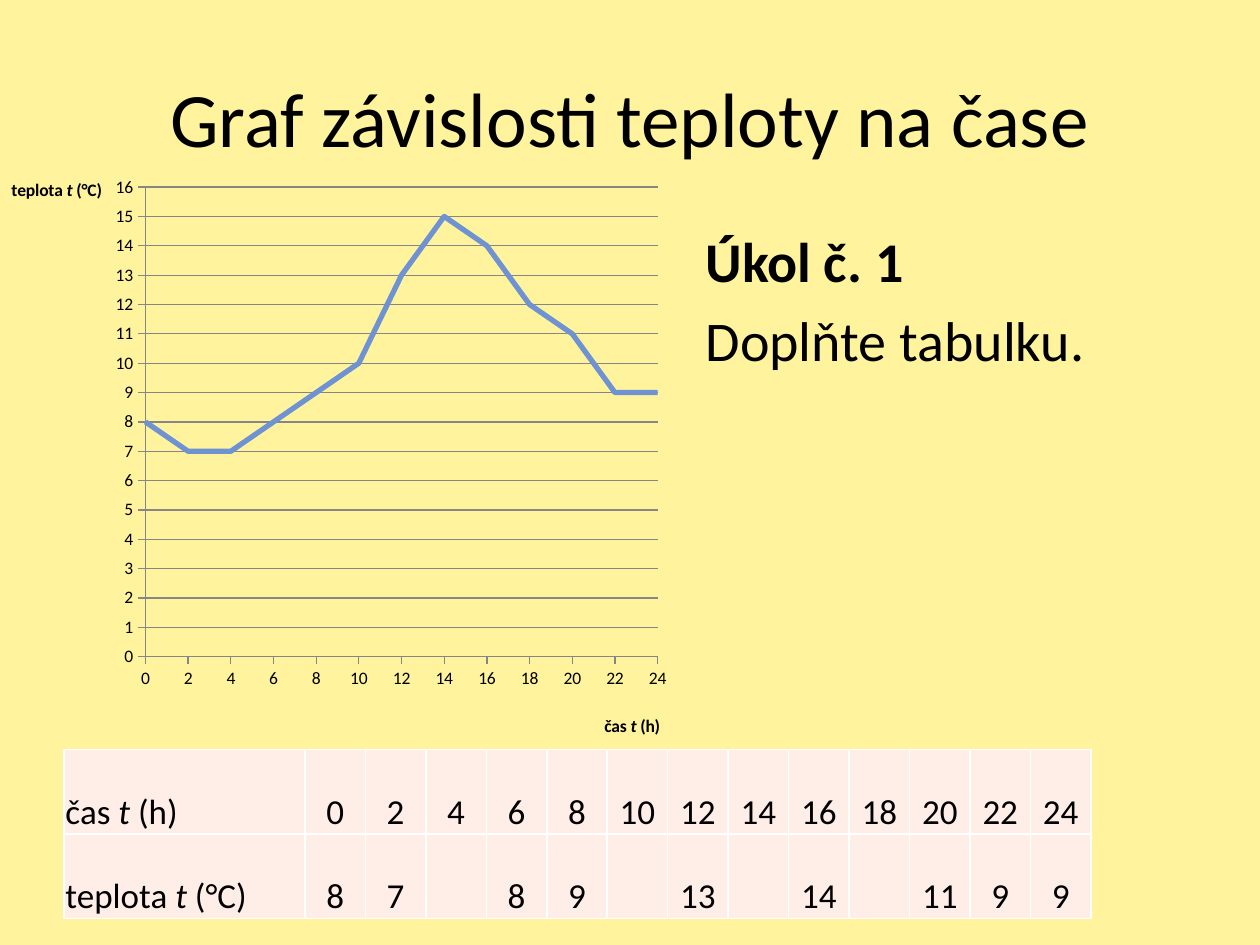
from lxml.etree import SubElement
from pptx import Presentation
from pptx.chart.data import XyChartData
from pptx.dml.color import RGBColor
from pptx.enum.chart import XL_CHART_TYPE, XL_TICK_MARK
from pptx.enum.text import MSO_ANCHOR, PP_ALIGN
from pptx.oxml import parse_xml
from pptx.oxml.ns import nsdecls, qn
from pptx.util import Inches, Pt

FONT = "Calibri"
BLACK, GRID, CURVE = "000000", "868686", "6E92D2"
BACKGROUND, CELL, BORDER = "FFF39D", "FFEDE8", "FFFFFF"

TITLE = "Graf závislosti teploty na čase"
TASK = [("Úkol č. 1", True), ("Doplňte tabulku.", False)]
# Quantity, symbol (italic), unit
TIME = ("čas ", "t", " (h)")
TEMPERATURE = ("teplota ", "t", " (°C)")
HOURS = list(range(0, 25, 2))
DEGREES = [8, 7, 7, 8, 9, 10, 13, 15, 14, 12, 11, 9, 9]
TO_FILL_IN = {4, 10, 14, 18}

PLOT_AREA = (0.253, 0.051, 0.717, 0.744)
LABEL_WIDTH, VALUE_WIDTH, ROW_HEIGHT = 1.91, 0.48, 0.67


def rgb(value):
    return RGBColor.from_string(value)


def style(font, size, bold=False, italic=False):
    font.name, font.size = FONT, Pt(size)
    font.bold, font.italic = bold, italic
    font.color.rgb = rgb(BLACK)


def place(shape, *box):
    shape.left, shape.top, shape.width, shape.height = map(Inches, box)


def write_quantity(paragraph, quantity, size, bold=False):
    for index, part in enumerate(quantity):
        run = paragraph.add_run()
        run.text = part
        style(run.font, size, bold, italic=index == 1)


def manual_layout(x, y, w=None, h=None):
    """Chart layout in shares of the chart's size; with w and h for the inner plot."""
    sized = w is not None
    values = [("layoutTarget", "inner")] if sized else []
    values += [("xMode", "edge"), ("yMode", "edge"), ("x", x), ("y", y)]
    if sized:
        values += [("w", w), ("h", h)]
    marks = "".join(f'<c:{tag} val="{value}"/>' for tag, value in values)
    return parse_xml(f'<c:layout {nsdecls("c")}><c:manualLayout>{marks}'
                     '</c:manualLayout></c:layout>')


def drop_layout(element):
    for layout in element.findall(qn("c:layout")):
        element.remove(layout)


def format_axis(axis, quantity, maximum, step, title_at):
    axis.minimum_scale, axis.maximum_scale, axis.major_unit = 0, maximum, step
    axis.major_tick_mark, axis.minor_tick_mark = XL_TICK_MARK.OUTSIDE, XL_TICK_MARK.NONE
    axis.format.line.color.rgb = rgb(GRID)
    style(axis.tick_labels.font, 10)
    frame = axis.axis_title.text_frame
    write_quantity(frame.paragraphs[0], quantity, 10, bold=True)
    body = frame._txBody.find(qn("a:bodyPr"))
    body.set("rot", "0")
    body.set("vert", "horz")
    title = axis.axis_title._element
    drop_layout(title)
    title.find(qn("c:tx")).addnext(manual_layout(*title_at))


def add_temperature_chart(slide):
    data = XyChartData()
    series = data.add_series("Series 1")
    for hour, degree in zip(HOURS, DEGREES):
        series.add_data_point(hour, degree)
    box = map(Inches, (-0.28, 1.23, 5.67, 5.01))
    chart = slide.shapes.add_chart(
        XL_CHART_TYPE.XY_SCATTER_LINES_NO_MARKERS, *box, data).chart
    chart.has_title = chart.has_legend = False
    style(chart.font, 10)
    format_axis(chart.category_axis, TIME, 24, 2, (0.89, 0.88))
    format_axis(chart.value_axis, TEMPERATURE, 16, 1, (0.06, 0.03))
    chart.category_axis.has_major_gridlines = False
    chart.value_axis.has_major_gridlines = True
    chart.value_axis.major_gridlines.format.line.color.rgb = rgb(GRID)
    plot = chart.plots[0]
    plot.vary_by_categories = False
    curve = plot.series[0]
    curve.smooth = False
    curve.format.line.color.rgb = rgb(CURVE)
    curve.format.line.width = Pt(3)
    plot_area = chart._chartSpace.chart.plotArea
    drop_layout(plot_area)
    plot_area.insert(0, manual_layout(*PLOT_AREA))


def format_cell(cell):
    cell.margin_left = cell.margin_right = cell.margin_top = Inches(0.01)
    cell.margin_bottom = 0
    cell.vertical_anchor = MSO_ANCHOR.BOTTOM
    properties = cell._tc.get_or_add_tcPr()
    for side in ("lnL", "lnR", "lnT", "lnB"):
        line = SubElement(properties, qn(f"a:{side}"), w=str(Pt(1)))
        SubElement(SubElement(line, qn("a:solidFill")), qn("a:srgbClr"), val=BORDER)
    cell.fill.solid()
    cell.fill.fore_color.rgb = rgb(CELL)


def add_value_table(slide):
    shown = ["" if h in TO_FILL_IN else d for h, d in zip(HOURS, DEGREES)]
    rows = [(TIME, HOURS), (TEMPERATURE, shown)]
    widths = [LABEL_WIDTH] + [VALUE_WIDTH] * len(HOURS)
    box = map(Inches, (0.51, 5.95, sum(widths), ROW_HEIGHT * len(rows)))
    table = slide.shapes.add_table(len(rows), len(widths), *box).table
    table.first_row = table.horz_banding = False
    for column, width in zip(table.columns, widths):
        column.width = Inches(width)
    for r, (quantity, values) in enumerate(rows):
        table.rows[r].height = Inches(ROW_HEIGHT)
        write_quantity(table.cell(r, 0).text_frame.paragraphs[0], quantity, 20)
        for c, value in enumerate(values, start=1):
            paragraph = table.cell(r, c).text_frame.paragraphs[0]
            paragraph.text = str(value)
            paragraph.alignment = PP_ALIGN.CENTER
            for run in paragraph.runs:
                style(run.font, 20)
    for cell in table.iter_cells():
        format_cell(cell)


def fill_placeholders(slide):
    title, body = slide.shapes.title, slide.placeholders[1]
    place(title, 0.5, 0.3, 9, 1.25)
    title.text_frame.text = TITLE
    style(title.text_frame.paragraphs[0].runs[0].font, 44)
    place(body, 5.5, 1.75, 4, 4)
    body.text_frame.text = "\n".join(text for text, _ in TASK)
    for paragraph, (_, bold) in zip(body.text_frame.paragraphs, TASK):
        style(paragraph.runs[0].font, 32, bold)
        properties = paragraph._p.get_or_add_pPr()
        properties.set("marL", "0")
        properties.set("indent", "0")
        SubElement(properties, qn("a:buNone"))


def main():
    deck = Presentation()
    deck.slide_width, deck.slide_height = Inches(10), Inches(7.5)
    slide = deck.slides.add_slide(deck.slide_layouts[1])
    slide.background.fill.solid()
    slide.background.fill.fore_color.rgb = rgb(BACKGROUND)
    fill_placeholders(slide)
    add_temperature_chart(slide)
    add_value_table(slide)
    deck.save("out.pptx")


if __name__ == "__main__":
    main()
